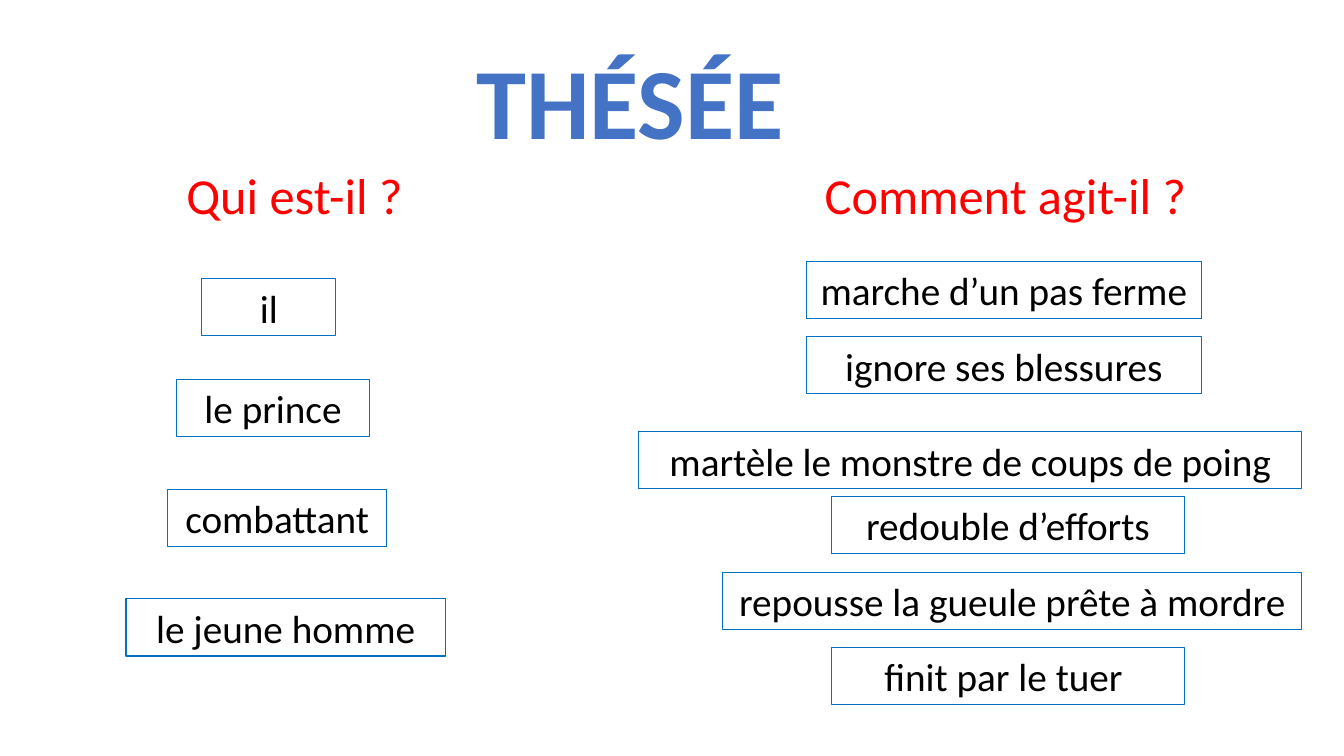
import pptx
import pptx.util
import pptx.dml.color
import pptx.enum.shapes
import pptx.enum.text
from dataclasses import dataclass

Align = pptx.enum.text.PP_ALIGN


@dataclass(frozen=True)
class Theme:
    """Hold the colours, type sizes and line width of the slide."""
    font: str = "Calibri"
    title: str = "4472C4"
    head: str = "FF0000"
    body: str = "000000"
    edge: str = "0070C0"
    big: int = 72
    mid: int = 36
    small: int = 28
    line: float = 0.75


THEME = Theme()
COLS, ROWS = 160, 90
WIDTH, HEIGHT = pptx.util.Inches(13.33), pptx.util.Inches(7.5)
HEAD_TALL, CARD_TALL = 8.5, 6.8

WHO = [
    ("il", 9, 14.2, 16),
    ("le prince", 6, 26.2, 23),
    ("combattant", 5, 39.3, 26),
    ("le jeune homme", 0, 52.3, 38),
]
ACTS = [
    ("marche d’un pas ferme", 20, 12.1, 47),
    ("ignore ses blessures", 20, 21.1, 47),
    ("martèle le monstre de coups de poing", 0, 32.4, 79),
    ("redouble d’efforts", 23, 40.1, 42),
    ("repousse la gueule prête à mordre", 10, 49.1, 69),
    ("finit par le tuer ", 23, 58.1, 42),
]


def color(code):
    """Turn a hex code into a colour."""
    return pptx.dml.color.RGBColor.from_string(code)


def place(box):
    """Turn grid columns and rows into slide lengths."""
    left, top, wide, tall = box
    return (round(left * WIDTH / COLS), round(top * HEIGHT / ROWS),
            round(wide * WIDTH / COLS), round(tall * HEIGHT / ROWS))


def write(shape, text, size, code, align, bold=False):
    """Set and format the one line of text in a shape."""
    frame = shape.text_frame
    frame.word_wrap = True
    frame.text = text
    line = frame.paragraphs[0]
    line.alignment = align
    font = line.runs[0].font
    font.name, font.size, font.bold = THEME.font, pptx.util.Pt(size), bold
    font.color.rgb = color(code)


def label(slide, box, text, size, code, align, bold=False):
    """Add a plain line of text in the given box."""
    shape = slide.shapes.add_textbox(*place(box))
    write(shape, text, size, code, align, bold)


def card(slide, box, text):
    """Add an outlined answer in the given box."""
    kind = pptx.enum.shapes.MSO_SHAPE.RECTANGLE
    shape = slide.shapes.add_shape(kind, *place(box))
    shape.shadow.inherit = False
    shape.fill.background()
    shape.line.color.rgb = color(THEME.edge)
    shape.line.width = pptx.util.Pt(THEME.line)
    write(shape, text, THEME.small, THEME.body, Align.CENTER)


def column(slide, box, head, inset, span, cards):
    """Place a heading and its answers relative to the column box."""
    left, top = box
    label(slide, (left + inset, top, span, HEAD_TALL), head,
          THEME.mid, THEME.head, Align.LEFT)
    for text, shift, drop, wide in cards:
        card(slide, (left + shift, top + drop, wide, CARD_TALL), text)


def main():
    """Build the slide and save it."""
    deck = pptx.Presentation()
    deck.slide_width, deck.slide_height = WIDTH, HEIGHT
    slide = deck.slides.add_slide(deck.slide_layouts[6])
    label(slide, (47, 4, 56, 15.7), "THÉSÉE",
          THEME.big, THEME.title, Align.CENTER, True)
    column(slide, (15, 19), "Qui est-il ?", 6, 35, WHO)
    column(slide, (76, 19), "Comment agit-il ?", 21, 48, ACTS)
    deck.save("out.pptx")


if __name__ == "__main__":
    main()
